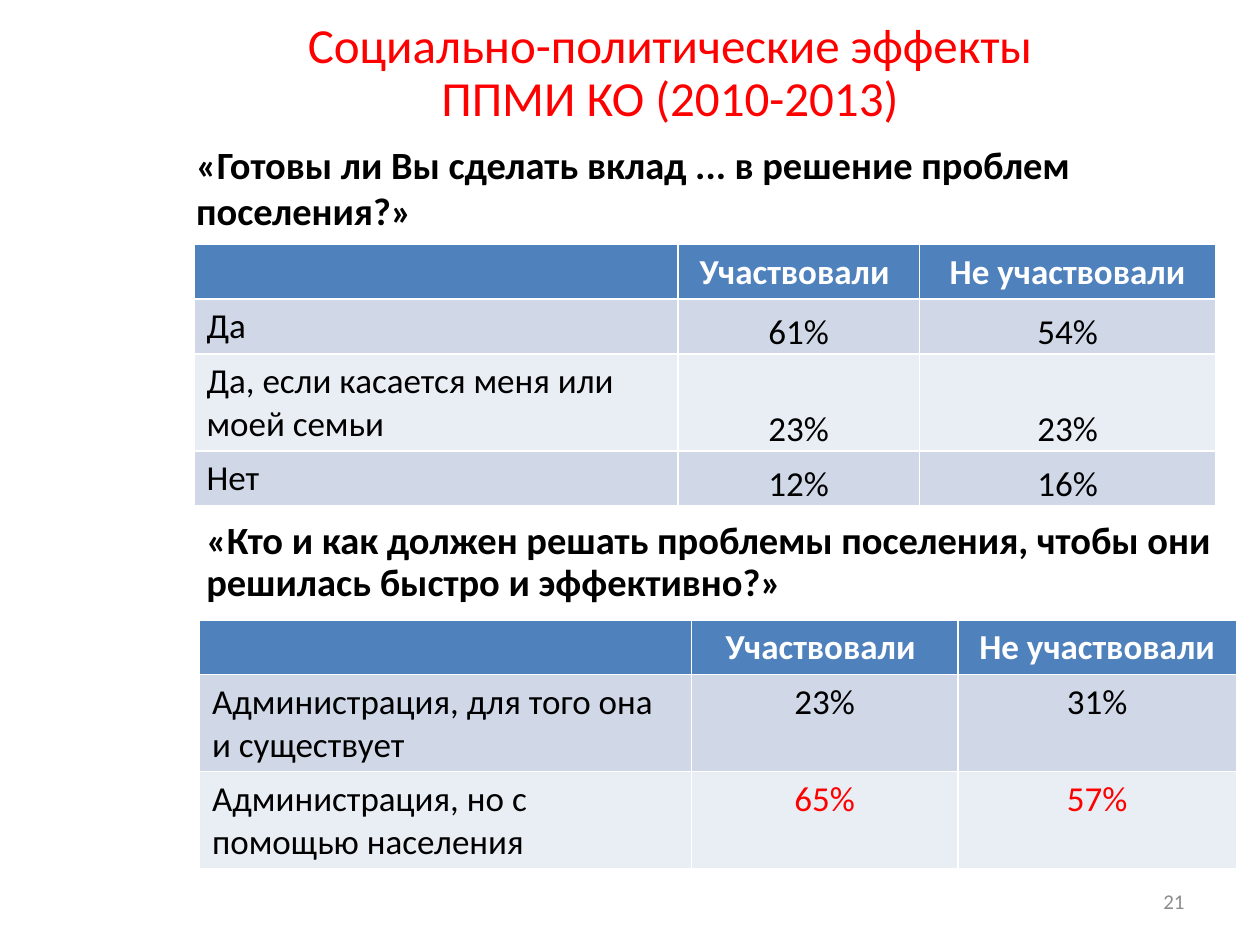
from dataclasses import dataclass

from pptx import Presentation
from pptx.dml.color import RGBColor
from pptx.enum.text import MSO_ANCHOR as Anchor, MSO_AUTO_SIZE as AutoSize, PP_ALIGN as Align
from pptx.util import Pt


@dataclass(frozen=True)
class Theme:
    font: str = "Calibri"
    black: str = "000000"
    white: str = "FFFFFF"
    red: str = "FF0000"
    grey: str = "8C8C8C"
    header: str = "4F81BD"
    bands: tuple = ("D0D8E8", "E9EDF4")
    title_size: float = 28
    question_size: float = 22
    table_size: float = 20
    number_size: float = 12


theme = Theme()


def write(frame, text, size, color=theme.black, bold=False, align=Align.LEFT,
          anchor=Anchor.TOP, spacing=1.0):
    """Put one formatted paragraph into a text frame or a table cell."""
    frame.vertical_anchor = anchor
    para = getattr(frame, "text_frame", frame).paragraphs[0]
    para.alignment = align
    para.line_spacing = spacing
    span = para.add_run()
    span.text = text
    span.font.name = theme.font
    span.font.size = Pt(size)
    span.font.bold = bold
    span.font.color.rgb = RGBColor.from_string(color)


deck = Presentation()
deck.slide_width, deck.slide_height = Pt(720), Pt(540)
page = deck.slides.add_slide(deck.slide_layouts[5])

# Title
title = page.shapes.title
title.left, title.top, title.width, title.height = Pt(139), Pt(15), Pt(487.5), Pt(55)
title.text_frame.word_wrap = True
title.text_frame.auto_size = AutoSize.NONE
write(title.text_frame, "Социально-политические эффекты ППМИ КО (2010-2013)",
      theme.title_size, theme.red, align=Align.CENTER, anchor=Anchor.MIDDLE, spacing=0.9)

# Survey questions and page number
question = dict(size=theme.question_size, bold=True)
texts = [
    ("«Готовы ли Вы сделать вклад ... в решение проблем поселения?»",
     (105, 77, 544.5, 60.5), question),
    ("«Кто и как должен решать проблемы поселения, чтобы они решилась быстро и эффективно?»",
     (110.8, 294.5, 590, 55.5), dict(question, spacing=0.9)),
    ("21", (516, 500.5, 168, 28.75),
     dict(size=theme.number_size, color=theme.grey, align=Align.RIGHT, anchor=Anchor.MIDDLE)),
]
for text, place, style in texts:
    box = page.shapes.add_textbox(*map(Pt, place))
    box.text_frame.word_wrap = True
    write(box.text_frame, text, **style)

# Answer tables: place, column widths, row heights, answers, format of the values
header = ("", "Участвовали ", "Не участвовали")
tables = [
    ((110.8, 139.7), (276.5, 138.2, 169.2), (31, 31, 55.5, 31),
     [("Да", "61%", "54%"),
      ("Да, если касается меня или моей семьи", "23%", "23%"),
      ("Нет", "12%", "16%")],
     dict(anchor=Anchor.BOTTOM, spacing=1.15), None),
    ((114, 354.2), (281, 152.5, 159), (31, 55.5, 55.5),
     [("Администрация, для того она и существует", "23%", "31%"),
      ("Администрация, но с помощью населения", "65%", "57%")],
     {}, 2),
]
for place, widths, heights, answers, value_style, red_row in tables:
    size = sum(widths), sum(heights)
    grid = page.shapes.add_table(len(heights), len(widths), *map(Pt, place + size)).table
    for column, width in zip(grid.columns, widths):
        column.width = Pt(width)
    for r, (height, row) in enumerate(zip(heights, [header] + answers)):
        grid.rows[r].height = Pt(height)
        for c, text in enumerate(row):
            cell = grid.cell(r, c)
            fill = theme.bands[(r - 1) % 2] if r else theme.header
            cell.fill.solid()
            cell.fill.fore_color.rgb = RGBColor.from_string(fill)
            style = dict(align=Align.CENTER if c else Align.LEFT)
            if r == 0:
                style.update(color=theme.white, bold=True)
            elif c:
                style.update(value_style, color=theme.red if r == red_row else theme.black)
                if value_style:
                    cell.margin_left = cell.margin_right = Pt(5)
                    cell.margin_top = cell.margin_bottom = Pt(0)
            write(cell, text, theme.table_size, **style)

deck.save("out.pptx")
